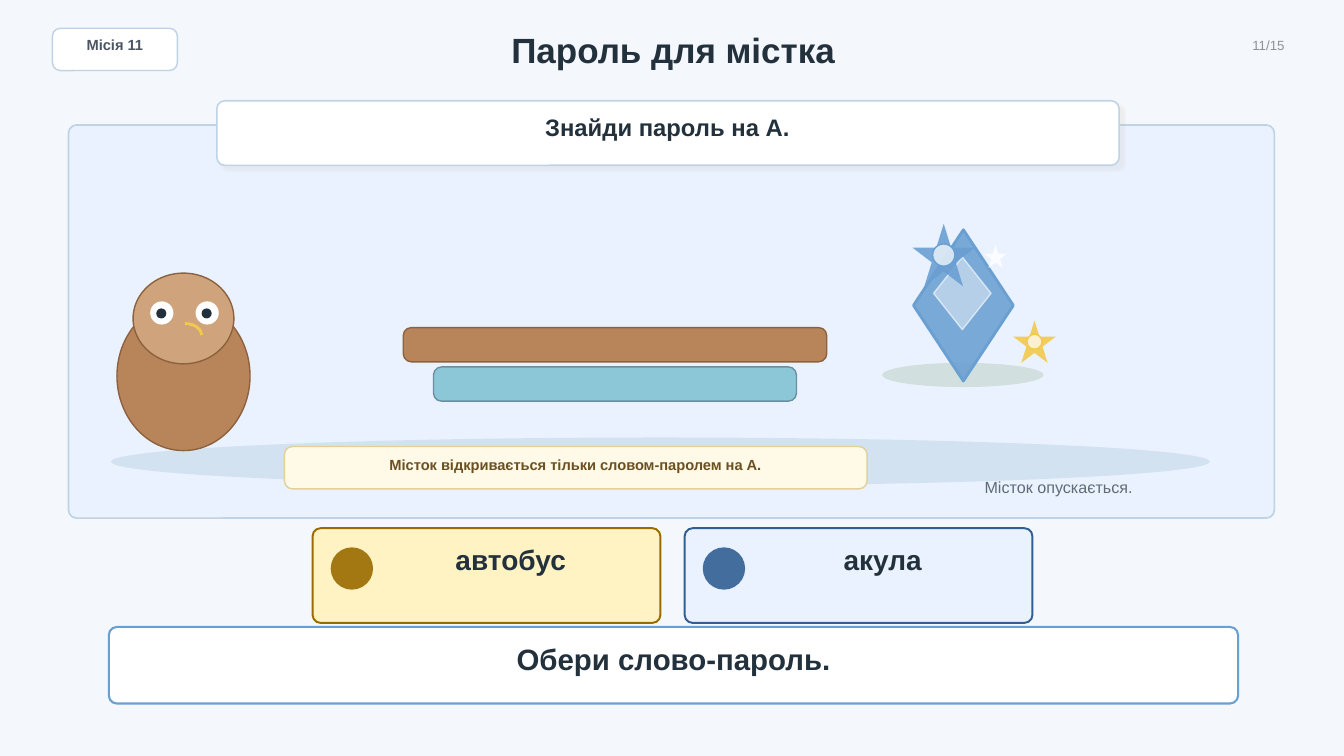
from lxml.etree import SubElement
from pptx import Presentation
from pptx.dml.color import RGBColor
from pptx.enum.shapes import MSO_SHAPE as Form
from pptx.enum.text import MSO_ANCHOR as Anchor, PP_ALIGN as Align
from pptx.oxml.ns import qn
from pptx.util import Cm, Pt


class Theme:
    font = "Arial"
    page, white, ice = "F4F7FC", "FFFFFF", "EAF2FF"
    ink, slate, gray, mist = "23313D", "4B5563", "8A929A", "5E6C78"
    edge, blue, navy = "BFD2E6", "6A9FD2", "315F93"
    wood, bark, tan = "B8845A", "8C623E", "CFA47C"
    pond, water, bank = "D2E1EF", "8CC7D8", "6A8FA3"
    moss, shade = "C9D9D5", "C8C1B0"
    sun, gold, lemon = "F2C94C", "9A6B00", "FFF3C4"
    cream, sand, umber = "FFF9E8", "E4CF98", "6B5120"
    title, prompt, word, task = 25, 21, 20, 17
    note, small, page_no = 11.5, 10.5, 9.5


INCH = 2.54  # cm
ROUND = 0.08  # corner radius in inches, the same on every card

deck = Presentation()
deck.slide_width, deck.slide_height = Cm(13.33 * INCH), Cm(7.5 * INCH)
slide = deck.slides.add_slide(deck.slide_layouts[6])
slide.background.fill.solid()
slide.background.fill.fore_color.rgb = RGBColor.from_string(Theme.page)


def draw(form, box, fill=None, line=None, width=1, alpha=()):
    """Add a shape; box is in inches, alpha lists percents for fill, then line."""
    shape = slide.shapes.add_shape(form, *[Cm(v * INCH) for v in box])
    shape.shadow.inherit = False
    if form == Form.ROUNDED_RECTANGLE:
        shape.adjustments[0] = ROUND / min(box[2:])
    if fill:
        shape.fill.solid()
        shape.fill.fore_color.rgb = RGBColor.from_string(fill)
    else:
        shape.fill.background()
    if line:
        shape.line.color.rgb = RGBColor.from_string(line)
        shape.line.width = Pt(width)
    else:
        shape.line.fill.background()
    tints = list(shape.element.spPr.iter(qn("a:srgbClr")))
    for tint, part in zip(tints, alpha):
        SubElement(tint, qn("a:alpha"), val=str(part * 1000))
    return shape


def write(text, box, size, color, bold=True, align=Align.CENTER):
    frame = slide.shapes.add_textbox(*[Cm(v * INCH) for v in box]).text_frame
    frame.word_wrap = True
    frame.vertical_anchor = Anchor.MIDDLE
    frame.margin_left = frame.margin_right = 0
    frame.margin_top = frame.margin_bottom = 0
    line = frame.paragraphs[0]
    line.text, line.alignment = text, align
    line.font.name, line.font.size, line.font.bold = Theme.font, Pt(size), bold
    line.font.color.rgb = RGBColor.from_string(color)


# Header
card = Form.ROUNDED_RECTANGLE
draw(card, (0.52, 0.28, 1.24, 0.42), Theme.white, Theme.edge)
write("Місія 11", (0.62, 0.37, 1.04, 0.15), Theme.small, Theme.slate)
write("Пароль для містка", (2, 0.25, 9.35, 0.48), Theme.title, Theme.ink)
write("11/15", (12.02, 0.37, 0.72, 0.16), Theme.page_no, Theme.gray,
      bold=False, align=Align.RIGHT)

# Scene and pond
draw(card, (0.68, 1.24, 11.96, 3.9), Theme.ice, Theme.edge, 1.2)
draw(Form.OVAL, (1.1, 4.34, 10.9, 0.48), Theme.pond, alpha=[92])

# Bird
draw(Form.OVAL, (1.16, 2.99, 1.32, 1.48), Theme.wood, Theme.bark)
draw(Form.OVAL, (1.32, 2.71, 1, 0.9), Theme.tan, Theme.bark)
for left in (1.49, 1.94):
    draw(Form.OVAL, (left, 2.99, 0.23, 0.23), Theme.white)
    draw(Form.OVAL, (left + 0.06, 3.06, 0.1, 0.1), Theme.ink)
draw(Form.ARC, (1.67, 3.21, 0.33, 0.23), line=Theme.sun, width=2)

# Bridge
draw(card, (4, 3.25, 4.2, 0.34), Theme.wood, Theme.bark)
draw(card, (4.3, 3.64, 3.6, 0.34), Theme.water, Theme.bank)

# Crystal and stars
draw(Form.OVAL, (8.75, 3.6, 1.6, 0.24), Theme.moss, alpha=[75])
draw(Form.DIAMOND, (9.06, 2.28, 0.99, 1.5), Theme.blue, Theme.blue, 2, [88])
draw(Form.DIAMOND, (9.26, 2.55, 0.57, 0.72), Theme.white, Theme.white,
     alpha=[45, 60])
star = Form.STAR_5_POINT
draw(star, (9.76, 2.43, 0.23, 0.23), Theme.white, alpha=[82])
for left, top, size, core, color in (
    (9.05, 2.22, 0.62, 0.22, Theme.blue),
    (10.05, 3.18, 0.42, 0.15, Theme.sun),
):
    gap = (size - core) / 2
    draw(star, (left, top, size, size), color, alpha=[90])
    draw(Form.OVAL, (left + gap, top + gap, core, core), Theme.white, color,
         alpha=[72])

# Task banner
banner = draw(card, (2.15, 1, 8.95, 0.64), Theme.white, Theme.edge, 1.1)
effects = banner.element.spPr.find(qn("a:effectLst"))
shadow = SubElement(effects, qn("a:outerShdw"), blurRad=str(Pt(1)),
                    dist=str(Pt(4)), dir=str(45 * 60000), rotWithShape="0")
tint = SubElement(shadow, qn("a:srgbClr"), val=Theme.shade)
SubElement(tint, qn("a:alpha"), val="16000")
write("Знайди пароль на А.", (2.38, 1.13, 8.48, 0.26), Theme.task, Theme.ink)

# Hint and prompt
draw(card, (2.82, 4.43, 5.78, 0.42), Theme.cream, Theme.sand)
write("Місток відкривається тільки словом-паролем на А.",
      (2.98, 4.52, 5.46, 0.18), Theme.small, Theme.umber)
draw(card, (1.08, 6.22, 11.2, 0.76), Theme.white, Theme.blue, 1.5)
write("Обери слово-пароль.", (1.34, 6.39, 10.68, 0.28), Theme.prompt, Theme.ink)

# Answers
for i, (word, fill, color) in enumerate((
    ("автобус", Theme.lemon, Theme.gold),
    ("акула", Theme.ice, Theme.navy),
)):
    left = 3.1 + i * 3.69
    draw(card, (left, 5.24, 3.45, 0.94), fill, color, 1.4)
    draw(Form.OVAL, (left + 0.18, 5.43, 0.42, 0.42), color, alpha=[90])
    write(word, (left + 0.66, 5.38, 2.61, 0.34), Theme.word, Theme.ink)

write("Місток опускається.", (9, 4.72, 3, 0.22), Theme.note, Theme.mist,
      bold=False)

deck.save("out.pptx")
